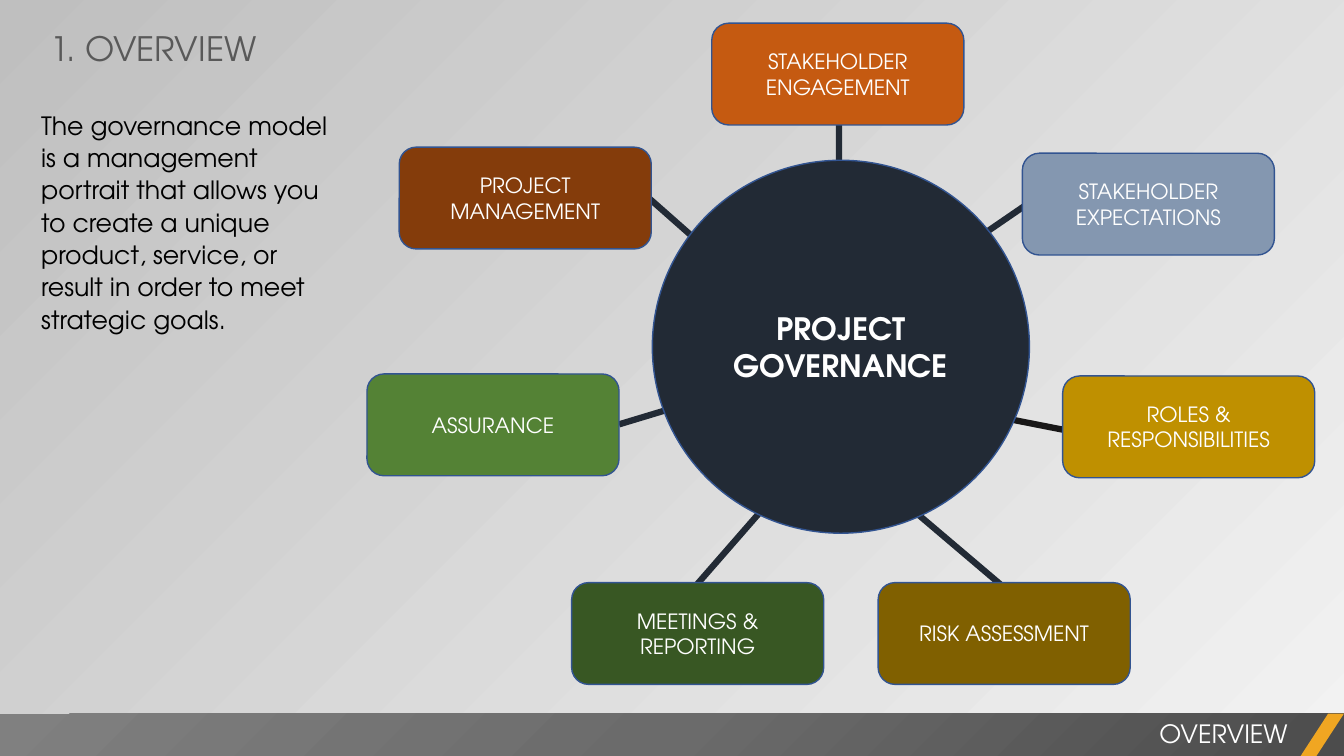
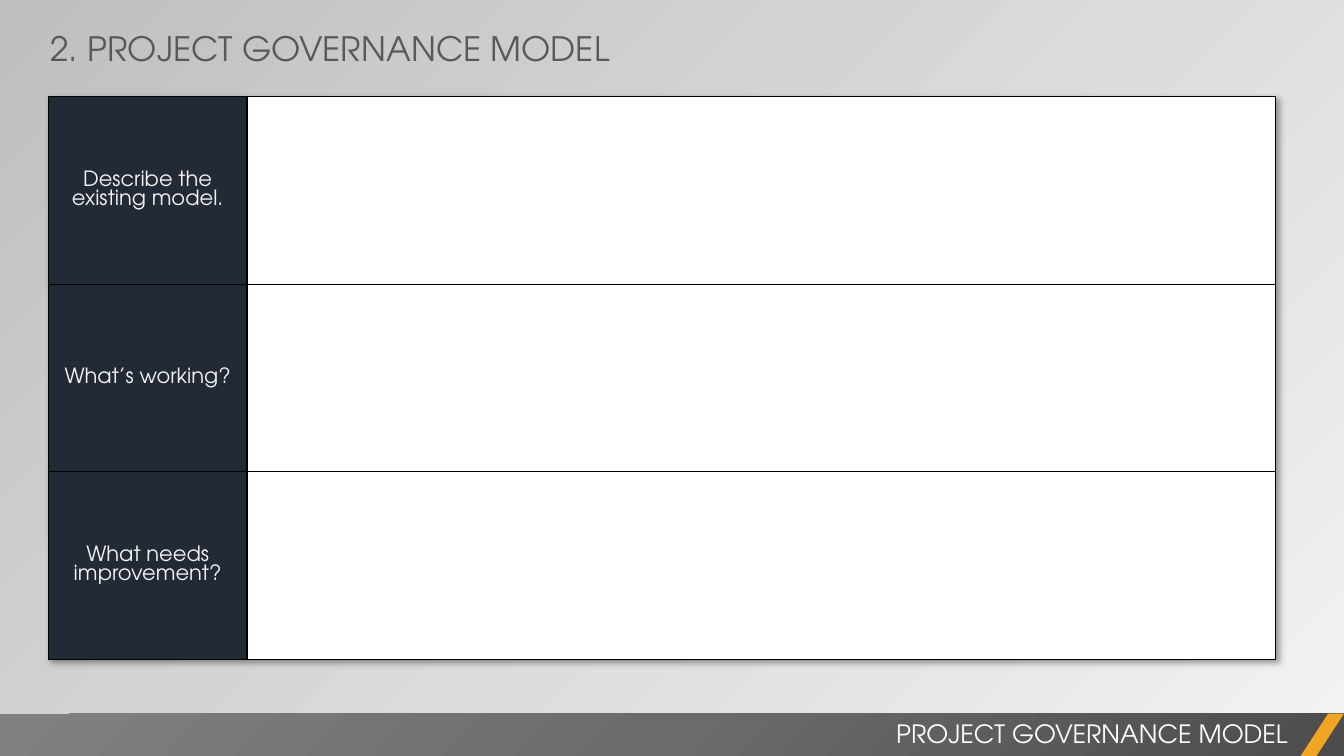
import typing

import pptx
import pptx.dml.color
import pptx.enum.shapes
import pptx.enum.text
import pptx.oxml
import pptx.oxml.ns
import pptx.util

Inches = pptx.util.Inches
Pt = pptx.util.Pt
RGBColor = pptx.dml.color.RGBColor
Align = pptx.enum.text.PP_ALIGN
Anchor = pptx.enum.text.MSO_ANCHOR
Preset = pptx.enum.shapes.MSO_SHAPE
Point = tuple[float, float]

FONT = "TeX Gyre Adventor"
WHITE = RGBColor(0xFF, 0xFF, 0xFF)
BLACK = RGBColor(0x00, 0x00, 0x00)
PALE = RGBColor(0xF2, 0xF2, 0xF2)
SILVER = RGBColor(0xBF, 0xBF, 0xBF)
GREY = RGBColor(0x59, 0x59, 0x59)
NAVY = RGBColor(0x22, 0x2A, 0x35)
CHARCOAL = RGBColor(0x18, 0x17, 0x17)
OUTLINE = RGBColor(0x32, 0x54, 0x91)
AMBER = RGBColor(0xF0, 0xA6, 0x22)
STEEL = RGBColor(0x84, 0x97, 0xB0)
ORANGE = RGBColor(0xC5, 0x5A, 0x11)
GREEN = RGBColor(0x54, 0x82, 0x35)
BROWN = RGBColor(0x84, 0x3C, 0x0B)
GOLD = RGBColor(0xBF, 0x90, 0x00)
FOREST = RGBColor(0x38, 0x57, 0x23)
OLIVE = RGBColor(0x80, 0x60, 0x00)
BAND_STOPS = (
    (0, RGBColor(0x4C, 0x4C, 0x4C)),
    (50, RGBColor(0x6B, 0x6B, 0x6B)),
    (100, RGBColor(0x80, 0x80, 0x80)),
)

SLIDE_W, SLIDE_H = 13.33, 7.5
BAND_TOP, BAND_H = 7.08, 0.42
BOX_W, BOX_H = 2.5, 1.01
NS = pptx.oxml.ns.nsdecls("a")


class Spoke(typing.NamedTuple):
    label: str
    fill: RGBColor
    left: float
    top: float
    start: Point
    end: Point
    line: RGBColor = NAVY


SPOKES = (
    Spoke("STAKEHOLDER ENGAGEMENT", ORANGE, 7.06, 0.23, (8.32, 1.07), (8.34, 5.29)),
    Spoke("STAKEHOLDER EXPECTATIONS", STEEL, 10.14, 1.52, (9.54, 2.47), (10.21, 2.01)),
    Spoke("ROLES & RESPONSIBILITIES", GOLD, 10.54, 3.73, (9.56, 4.07), (10.68, 4.29), CHARCOAL),
    Spoke("RISK ASSESSMENT", OLIVE, 8.71, 5.78, (8.96, 4.98), (10.22, 6.05)),
    Spoke("MEETINGS & REPORTING", FOREST, 5.67, 5.78, (7.6, 5.01), (6.78, 5.95)),
    Spoke("ASSURANCE", GREEN, 3.64, 3.71, (7.1, 3.92), (6.14, 4.21)),
    Spoke("PROJECT MANAGEMENT", BROWN, 3.96, 1.46, (7.03, 2.49), (6.35, 1.89)),
)
QUESTIONS = ("Describe the existing model.", "What’s working?", "What needs improvement?")


def write(tf, text: str, *, size: float, color: RGBColor, bold: bool = False,
          align=Align.LEFT, spacing: float | None = None, after: float = 0) -> None:
    p = tf.paragraphs[0]
    p.alignment = align
    p.line_spacing = spacing
    p.space_after = Pt(after)
    r = p.add_run()
    r.text = text
    r.font.name = FONT
    r.font.size = Pt(size)
    r.font.bold = bold
    r.font.color.rgb = color


def add_text(s, left: float, top: float, width: float, height: float, text: str,
             wrap: bool = True, **style) -> None:
    sp = s.shapes.add_textbox(Inches(left), Inches(top), Inches(width), Inches(height))
    sp.text_frame.word_wrap = wrap
    write(sp.text_frame, text, **style)


def add_shape(s, preset, left: float, top: float, width: float, height: float,
              fill: RGBColor, outline: RGBColor | None = None):
    sp = s.shapes.add_shape(preset, Inches(left), Inches(top), Inches(width), Inches(height))
    sp.shadow.inherit = False
    sp.fill.solid()
    sp.fill.fore_color.rgb = fill
    if outline is None:
        sp.line.fill.background()
    else:
        sp.line.color.rgb = outline
        sp.line.width = Pt(1)
    return sp


def add_node(s, preset, left: float, top: float, width: float, height: float,
             fill: RGBColor, text: str, size: float, bold: bool = False) -> None:
    tf = add_shape(s, preset, left, top, width, height, fill, OUTLINE).text_frame
    tf.word_wrap = True
    tf.vertical_anchor = Anchor.MIDDLE
    write(tf, text, size=size, color=WHITE, bold=bold, align=Align.CENTER)


def add_line(s, start: Point, end: Point, color: RGBColor) -> None:
    line = s.shapes.add_connector(pptx.enum.shapes.MSO_CONNECTOR.STRAIGHT,
                                  *(Inches(v) for v in (*start, *end)))
    line.line.color.rgb = color
    line.line.width = Pt(4.5)
    line._element.spPr.append(pptx.oxml.parse_xml(f"<a:effectLst {NS}/>"))


def add_band(s) -> None:
    sp = add_shape(s, Preset.RECTANGLE, 0, BAND_TOP, SLIDE_W, BAND_H, GREY)
    stops = "".join(f'<a:gs pos="{pos * 1000}"><a:srgbClr val="{color}"/></a:gs>'
                    for pos, color in BAND_STOPS)
    gradient = pptx.oxml.parse_xml(
        f'<a:gradFill {NS} rotWithShape="1"><a:gsLst>{stops}</a:gsLst>'
        '<a:path path="circle"><a:fillToRect l="100000" t="100000"/></a:path></a:gradFill>')
    spPr = sp._element.spPr
    spPr.replace(spPr.find(pptx.oxml.ns.qn("a:solidFill")), gradient)


def add_slide(prs, number: int, name: str, title_width: float):
    s = prs.slides.add_slide(prs.slide_layouts[6])
    fill = s.background.fill
    fill.gradient()
    fill.gradient_angle = 135
    for stop, color in zip(fill.gradient_stops, (PALE, SILVER)):
        stop.color.rgb = color
    add_band(s)
    accent = add_shape(s, Preset.PARALLELOGRAM, 12.9, BAND_TOP, 0.43, BAND_H, AMBER)
    accent.adjustments[0] = 0.65
    add_text(s, 5.25, 7.08, 7.62, 0.4, name, size=18, color=WHITE, align=Align.RIGHT)
    add_text(s, 0.4, 0.23, title_width, 0.5, f"{number}. {name}", wrap=False,
             size=24, color=GREY)
    return s


def format_cell(cell, fill: RGBColor) -> None:
    tcPr = cell._tc.get_or_add_tcPr()
    for side in "LRTB":
        tcPr.append(pptx.oxml.parse_xml(
            f'<a:ln{side} {NS} w="{Pt(1)}"><a:solidFill><a:srgbClr val="{BLACK}"/>'
            f"</a:solidFill></a:ln{side}>"))
    cell.fill.solid()
    cell.fill.fore_color.rgb = fill
    cell.vertical_anchor = Anchor.MIDDLE


def add_question_table(s) -> None:
    widths, row_h = (1.97, 10.2), 1.86
    rows = len(QUESTIONS)
    table = s.shapes.add_table(rows, len(widths), Inches(0.48), Inches(0.96),
                               Inches(sum(widths)), Inches(rows * row_h)).table
    table.first_row = table.horz_banding = False
    table._tbl.tblPr.insert(0, pptx.oxml.parse_xml(
        f'<a:effectLst {NS}><a:outerShdw blurRad="{Pt(4)}" dist="{Pt(3)}" dir="2700000" '
        f'algn="tl" rotWithShape="0"><a:srgbClr val="{BLACK}"><a:alpha val="40000"/>'
        "</a:srgbClr></a:outerShdw></a:effectLst>"))
    for column, width in zip(table.columns, widths):
        column.width = Inches(width)
    for i, question in enumerate(QUESTIONS):
        table.rows[i].height = Inches(row_h)
        label, answer = table.cell(i, 0), table.cell(i, 1)
        format_cell(label, NAVY)
        format_cell(answer, WHITE)
        write(label.text_frame, question, size=15, color=PALE, align=Align.CENTER)


def build_overview(prs) -> None:
    s = add_slide(prs, 1, "OVERVIEW", 2.3)
    for spoke in SPOKES:
        add_line(s, spoke.start, spoke.end, spoke.line)
    add_node(s, Preset.OVAL, 6.47, 1.59, 3.74, 3.7, NAVY, "PROJECT GOVERNANCE", 22, bold=True)
    for spoke in SPOKES:
        add_node(s, Preset.ROUNDED_RECTANGLE, spoke.left, spoke.top, BOX_W, BOX_H,
                 spoke.fill, spoke.label, 15)
    add_text(s, 0.31, 1.02, 3.04, 2.67,
             "The governance model is a management portrait that allows you to create "
             "a unique product, service, or result in order to meet strategic goals.",
             size=18, color=BLACK, spacing=1.07, after=8)


def build_model(prs) -> None:
    s = add_slide(prs, 2, "PROJECT GOVERNANCE MODEL", 5.82)
    add_question_table(s)


def main() -> None:
    prs = pptx.Presentation()
    prs.slide_width, prs.slide_height = Inches(SLIDE_W), Inches(SLIDE_H)
    build_overview(prs)
    build_model(prs)
    prs.save("out.pptx")


if __name__ == "__main__":
    main()
